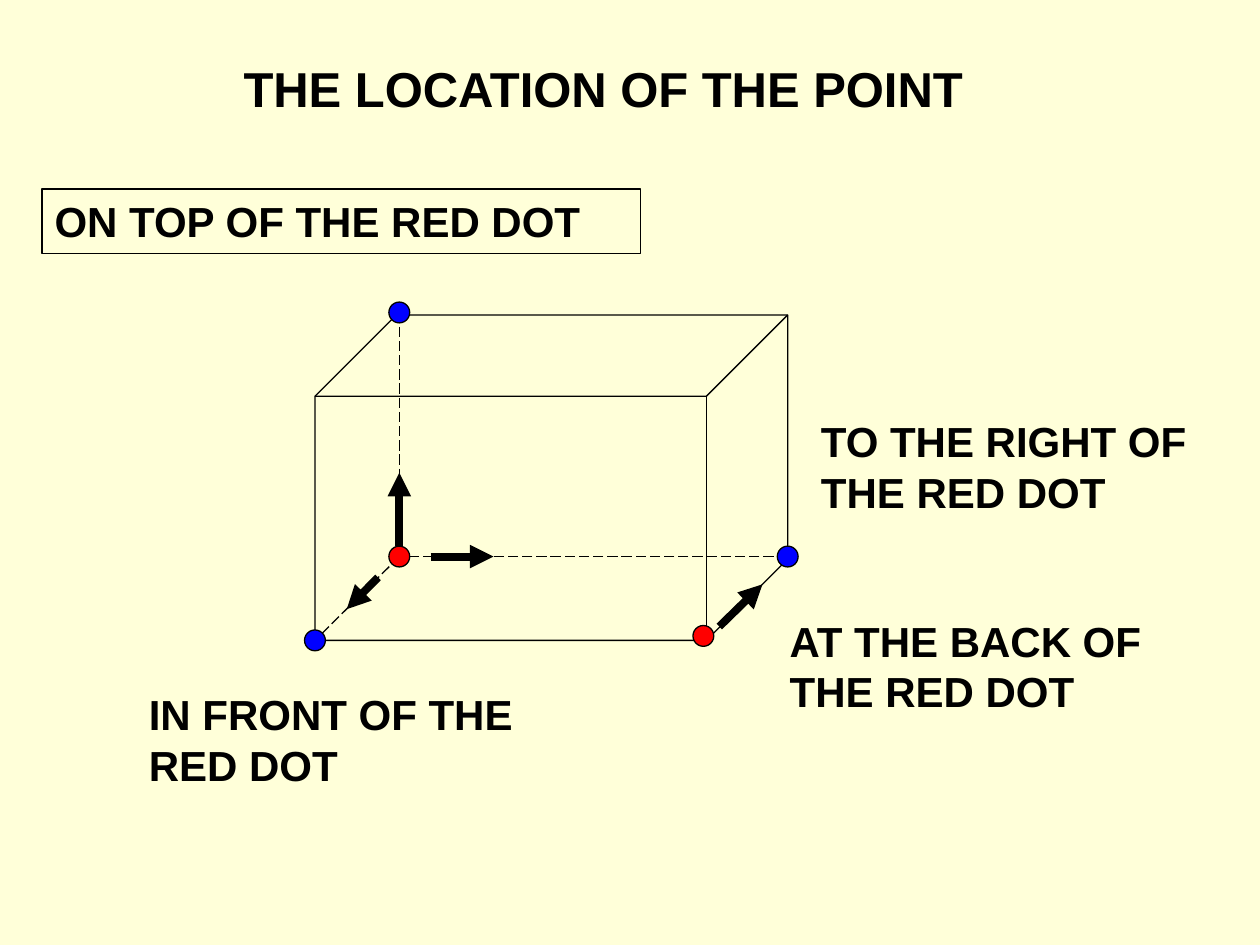
import pptx
import pptx.dml.color
import pptx.enum.dml
import pptx.enum.shapes
import pptx.enum.text
import pptx.oxml
import pptx.oxml.ns
import pptx.util

Cm, Pt = pptx.util.Cm, pptx.util.Pt
SHAPE = pptx.enum.shapes.MSO_SHAPE
COLORS = {"paper": "FFFFD9", "ink": "000000", "red": "FF0000", "blue": "0000FF"}


def rgb(name):
    return pptx.dml.color.RGBColor.from_string(COLORS[name])


class Diagram:
    font = "Arial"
    thin = 0.75
    thick = 4.5
    dot_size = 0.42

    def __init__(self, slide):
        self.s = slide
        fill = slide.background.fill
        fill.solid()
        fill.fore_color.rgb = rgb("paper")

    def outline(self, sp, width):
        sp.line.color.rgb = rgb("ink")
        sp.line.width = Pt(width)

    def shape(self, kind, x, y, w, h, fill=None):
        sp = self.s.shapes.add_shape(kind, Cm(x), Cm(y), Cm(w), Cm(h))
        sp.shadow.inherit = False
        if fill:
            sp.fill.solid()
            sp.fill.fore_color.rgb = rgb(fill)
        else:
            sp.fill.background()
        self.outline(sp, self.thin)
        return sp

    def dot(self, center, color):
        x, y = (c - self.dot_size / 2 for c in center)
        self.shape(SHAPE.OVAL, x, y, self.dot_size, self.dot_size, color)

    def line(self, start, end, width):
        ends = [Cm(c) for c in (*start, *end)]
        sp = self.s.shapes.add_connector(pptx.enum.shapes.MSO_CONNECTOR.STRAIGHT, *ends)
        self.outline(sp, width)
        sp._element.spPr.append(pptx.oxml.parse_xml(
            f'<a:effectLst {pptx.oxml.ns.nsdecls("a")}/>'))
        return sp

    def hidden_edge(self, start, end):
        sp = self.line(start, end, self.thin)
        sp.line.dash_style = pptx.enum.dml.MSO_LINE.LONG_DASH

    def arrow(self, start, end):
        sp = self.line(start, end, self.thick)
        sp.line._get_or_add_ln().append(pptx.oxml.parse_xml(
            f'<a:tailEnd {pptx.oxml.ns.nsdecls("a")} type="triangle"/>'))

    def label(self, text, x, y, w, h, size=24, boxed=False):
        sp = self.s.shapes.add_textbox(Cm(x), Cm(y), Cm(w), Cm(h))
        if boxed:
            self.outline(sp, self.thin)
        tf = sp.text_frame
        tf.word_wrap = True
        tf.auto_size = pptx.enum.text.MSO_AUTO_SIZE.SHAPE_TO_FIT_TEXT
        tf.text = text
        font = tf.paragraphs[0].runs[0].font
        font.name, font.size, font.bold = self.font, Pt(size), True
        font.color.rgb = rgb("ink")


def main():
    prs = pptx.Presentation()
    prs.slide_width, prs.slide_height = Cm(25.4), Cm(19.05)
    d = Diagram(prs.slides.add_slide(prs.slide_layouts[6]))

    corner, right, front = (8.05, 11.22), (15.88, 11.22), (6.35, 12.91)
    top, front_right = (8.05, 6.3), (14.18, 12.82)

    cube = d.shape(SHAPE.CUBE, 6.35, 6.35, 9.53, 6.56)
    cube.adjustments[0] = 0.25
    for start, end in ((top, (8.05, 11)), (right, corner), (corner, front)):
        d.hidden_edge(start, end)
    for center, color in ((top, "blue"), (corner, "red"), (right, "blue"), (front, "blue")):
        d.dot(center, color)
    for start, end in (
        ((8.05, 11), (8.05, 9.53)),
        ((8.68, 11.22), (9.95, 11.22)),
        ((7.62, 11.64), (6.99, 12.28)),
        ((14.5, 12.63), (15.37, 11.78)),
    ):
        d.arrow(start, end)
    d.dot(front_right, "red")

    d.label("ON TOP OF THE RED DOT", 0.85, 3.81, 12.07, 1.3, boxed=True)
    d.label("TO THE RIGHT OF THE RED DOT", 16.3, 8.26, 8.26, 2.29)
    d.label("IN FRONT OF THE RED DOT", 2.75, 13.76, 8.26, 2.29)
    d.label("AT THE BACK OF THE RED DOT", 15.67, 12.28, 8.04, 2.29)
    d.label("THE LOCATION OF THE POINT", 4.66, 1.06, 15.88, 1.45, size=28)
    prs.save("out.pptx")


if __name__ == "__main__":
    main()
